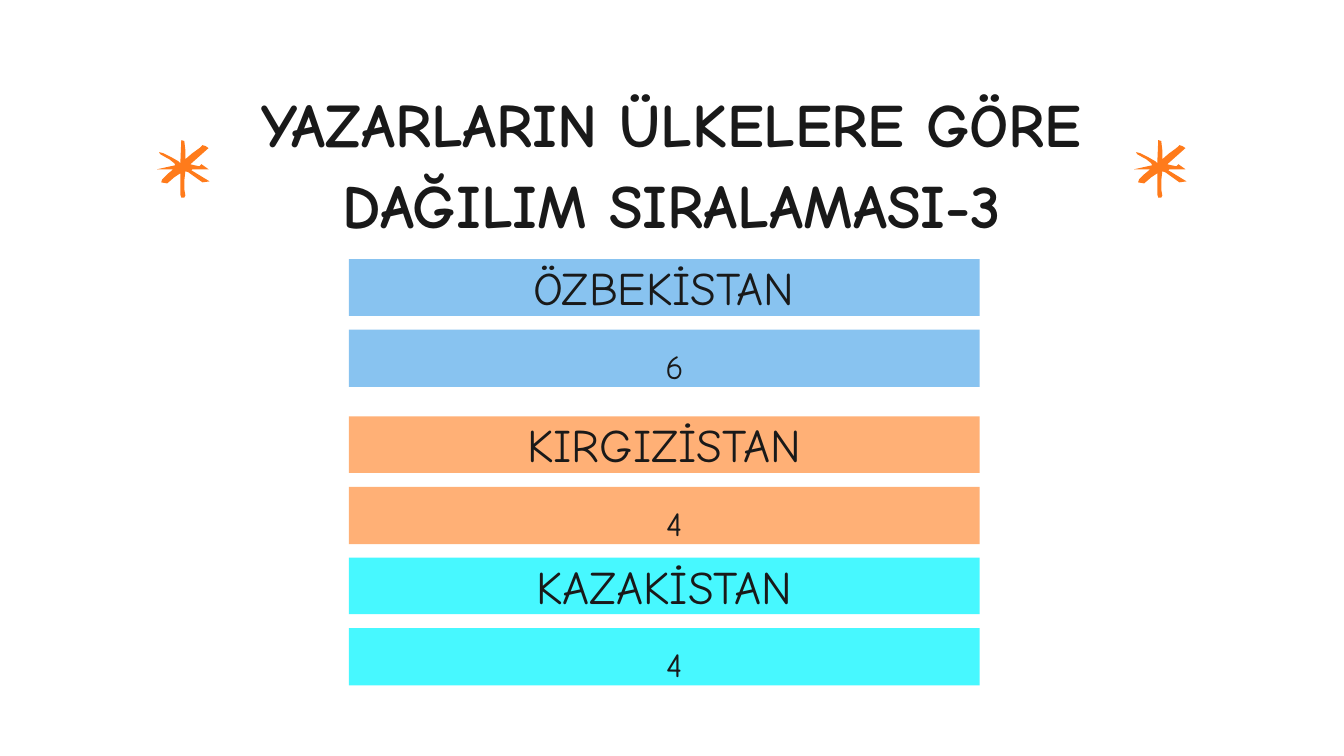
from dataclasses import dataclass

import pptx
import pptx.dml.color
import pptx.enum.shapes
import pptx.enum.text
import pptx.shapes.autoshape
import pptx.util
from pptx.util import Cm

COLORS = {
    "ink": "191919",
    "star": "FF7B1B",
    "blue": "88C3F0",
    "orange": "FFB076",
    "cyan": "47F8FF",
}
FONT = "Comic Neue"

BAR_LEFT, BAR_WIDTH = 8.79, 15.9
NAME_HEIGHT, COUNT_HEIGHT = 1.43, 1.44
COUNT_OFFSET = 1.78
COUNT_INDENT = 0.51

STAR_TOP = 3.53
STAR_LEFTS = (3.96, 28.58)
STAR_UNITS_PER_INCH = 100
STAR_OUTLINE = [
    (24, 0), (27, 1), (28, 10), (28, 19), (35, 13), (42, 8), (45, 5), (48, 6),
    (51, 8), (33, 24), (37, 25), (42, 26), (44, 24), (51, 29), (35, 29), (34, 30),
    (52, 41), (45, 42), (38, 37), (31, 32), (28, 31), (27, 40), (27, 49), (28, 55),
    (27, 57), (24, 57), (23, 54), (23, 36), (23, 33), (17, 37), (10, 43), (4, 42),
    (5, 39), (10, 34), (16, 29), (0, 29), (18, 25), (17, 23), (12, 19), (10, 18),
    (3, 14), (2, 12), (6, 13), (14, 17), (21, 21), (23, 23),
]


@dataclass
class Country:
    name: str
    count: int
    top: float
    color: str


COUNTRIES = [
    Country("ÖZBEKİSTAN", 6, 6.53, "blue"),
    Country("KIRGIZİSTAN", 4, 10.49, "orange"),
    Country("KAZAKİSTAN", 4, 14.05, "cyan"),
]


def rgb(color: str) -> pptx.dml.color.RGBColor:
    return pptx.dml.color.RGBColor.from_string(COLORS[color])


def paint(shape: pptx.shapes.autoshape.Shape, color: str) -> None:
    """Give a shape a flat fill without line or shadow."""
    shape.shadow.inherit = False
    shape.fill.solid()
    shape.fill.fore_color.rgb = rgb(color)
    shape.line.fill.background()


def write(shape: pptx.shapes.autoshape.Shape, text: str, *, size: float,
          bold: bool = False, line_spacing: float = 1.0, indent: float = 0) -> None:
    frame = shape.text_frame
    frame.word_wrap = True
    frame.vertical_anchor = pptx.enum.text.MSO_ANCHOR.TOP
    frame.margin_left = frame.margin_top = frame.margin_right = frame.margin_bottom = 0
    paragraph = frame.paragraphs[0]
    paragraph.alignment = pptx.enum.text.PP_ALIGN.CENTER
    paragraph.line_spacing = line_spacing
    if indent:
        paragraph.level = 1
        properties = paragraph._p.get_or_add_pPr()
        properties.set("marL", str(Cm(indent)))
        properties.set("indent", "0")
    run = paragraph.add_run()
    run.text = text
    run.font.name = FONT
    run.font.size = pptx.util.Pt(size)
    run.font.bold = bold
    run.font.color.rgb = rgb("ink")


def add_star(slide: pptx.slide.Slide, left: float) -> None:
    builder = slide.shapes.build_freeform(
        *STAR_OUTLINE[0], scale=Cm(2.54) / STAR_UNITS_PER_INCH)
    builder.add_line_segments(STAR_OUTLINE[1:], close=True)
    paint(builder.convert_to_shape(Cm(left), Cm(STAR_TOP)), "star")


def add_country(slide: pptx.slide.Slide, country: Country) -> None:
    """Draw the count bar and the name bar of a country as one group."""
    group = slide.shapes.add_group_shape()

    def add_bar(top: float, height: float) -> pptx.shapes.autoshape.Shape:
        bar = group.shapes.add_shape(
            pptx.enum.shapes.MSO_SHAPE.RECTANGLE,
            Cm(BAR_LEFT), Cm(top), Cm(BAR_WIDTH), Cm(height))
        paint(bar, country.color)
        return bar

    count_bar = add_bar(country.top + COUNT_OFFSET, COUNT_HEIGHT)
    write(count_bar, str(country.count), size=24, line_spacing=1.4, indent=COUNT_INDENT)
    write(add_bar(country.top, NAME_HEIGHT), country.name, size=33.3)


def main() -> None:
    presentation = pptx.Presentation()
    presentation.slide_width, presentation.slide_height = Cm(33.87), Cm(19.05)
    slide = presentation.slides.add_slide(presentation.slide_layouts[6])

    title = slide.shapes.add_textbox(Cm(5.82), Cm(1.98), Cm(22.23), Cm(4.14))
    write(title, "YAZARLARIN ÜLKELERE GÖRE DAĞILIM SIRALAMASI-3",
          size=44, bold=True, line_spacing=1.1)
    for left in STAR_LEFTS:
        add_star(slide, left)
    for country in COUNTRIES:
        add_country(slide, country)

    presentation.save("out.pptx")


if __name__ == "__main__":
    main()
